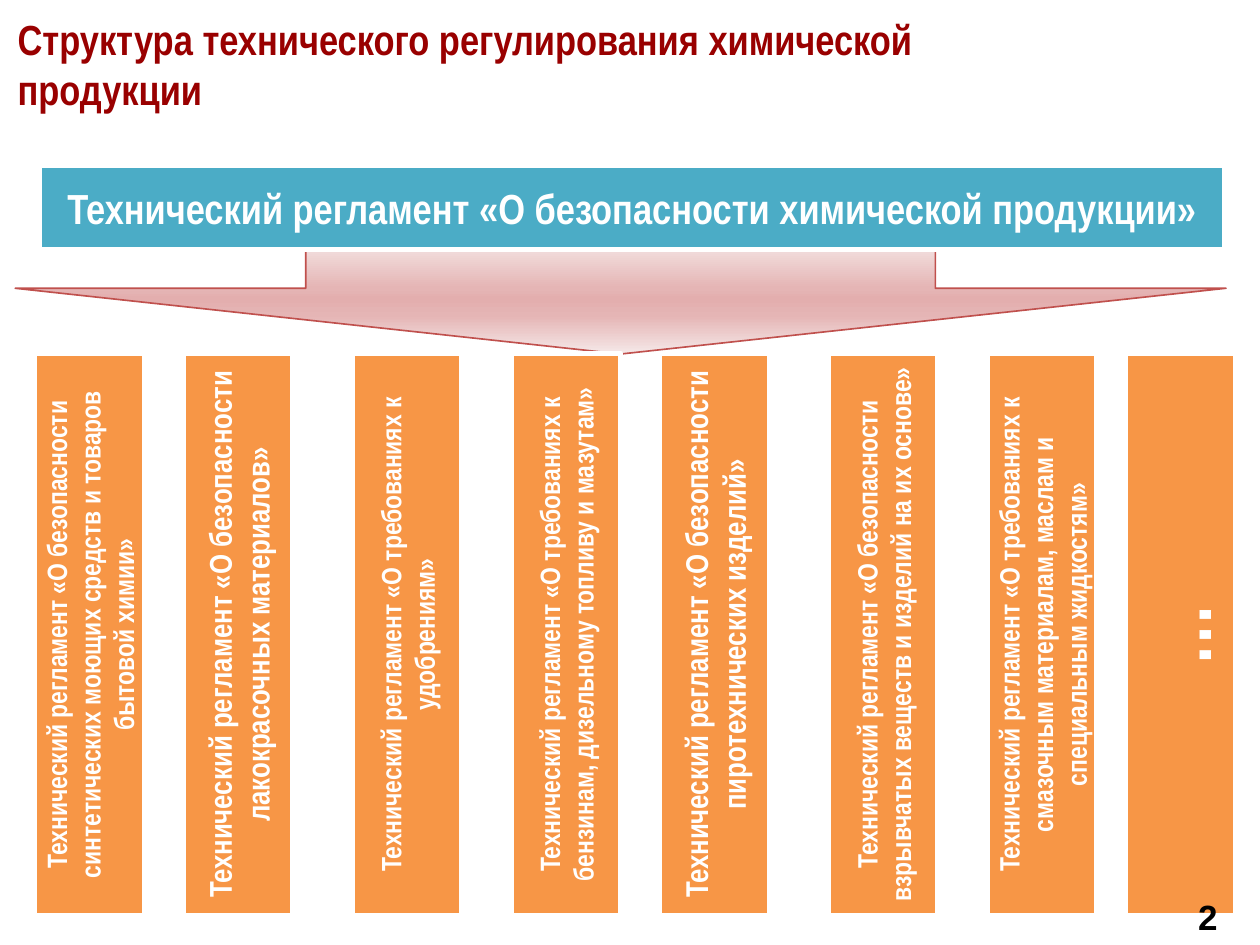
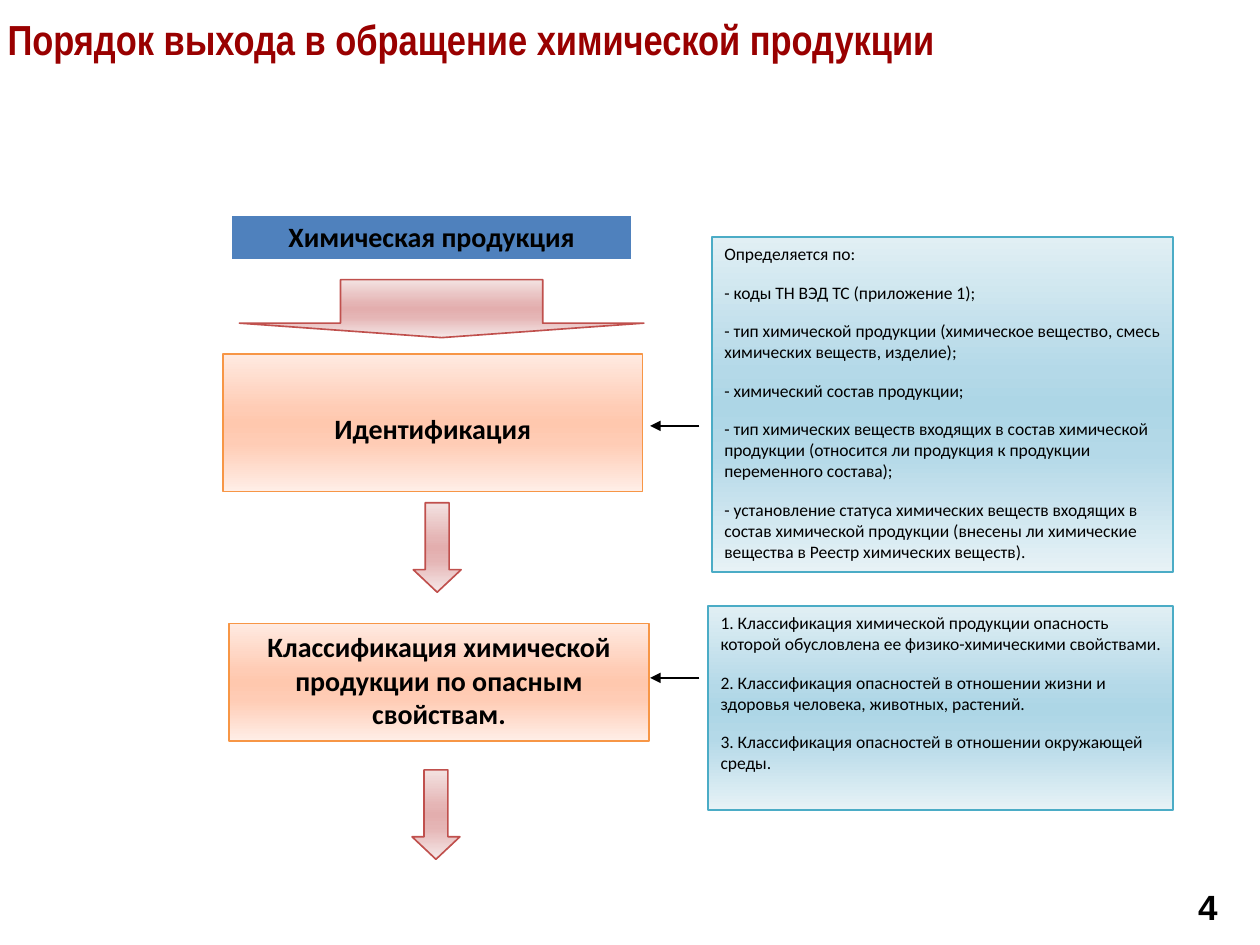
import pptx
import pptx.dml.color
import pptx.enum.shapes
import pptx.enum.text
import pptx.oxml
import pptx.oxml.ns
import pptx.util
from lxml import etree

Inches = pptx.util.Inches
Pt = pptx.util.Pt
MSO = pptx.enum.shapes.MSO_SHAPE
ANCHOR = pptx.enum.text.MSO_ANCHOR
ALIGN = pptx.enum.text.PP_ALIGN
rgb = pptx.dml.color.RGBColor.from_string
qn = pptx.oxml.ns.qn

STOPS = [0, 40, 50, 65, 100]
ROSE = ["F3E2E1", "E5B5B5", "E3AEAE", "E5B5B5", "F5E8E8"]
PEACH = ["FFEAE1", "FFCCB5", "FFC8AE", "FFCCB5", "FFEEE7"]
AQUA = ["E1EFF4", "B4D9E8", "ADD6E6", "B4D9E8", "E7F2F6"]
TITLE = {"name": "Arial Narrow", "size": Pt(24), "bold": True}
NUMBER = {"name": "Arial", "size": Pt(20), "bold": True}
STEP = {"name": "Calibri", "size": Pt(16), "bold": True}
NOTE = {"name": "Calibri", "size": Pt(10), "bold": False}


def add_box(s, kind, box, fill, line, width=0.94):
    sp = s.shapes.add_shape(kind, *map(Inches, box))
    sp.shadow.inherit = False
    sp.line.color.rgb = rgb(line)
    sp.line.width = Pt(width)
    if isinstance(fill, str):
        sp.fill.solid()
        sp.fill.fore_color.rgb = rgb(fill)
    else:
        sp.fill.gradient()
        sp.fill.gradient_angle = 270
        stops = sp._element.spPr.find(qn("a:gradFill")).find(qn("a:gsLst"))
        for old in list(stops):
            stops.remove(old)
        for pos, color in zip(STOPS, fill):
            gs = etree.SubElement(stops, qn("a:gs"), pos=str(pos * 1000))
            etree.SubElement(gs, qn("a:srgbClr"), val=color)
    return sp


def write(sp, lines, font, color, align=ALIGN.LEFT, anchor=ANCHOR.TOP, after=0):
    tf = sp.text_frame
    tf.word_wrap = True
    tf.auto_size = pptx.enum.text.MSO_AUTO_SIZE.NONE
    tf.vertical_anchor = anchor
    for i, line in enumerate(lines):
        p = tf.paragraphs[0] if i == 0 else tf.add_paragraph()
        p.alignment = align
        p.space_before = Pt(0)
        p.space_after = Pt(after)
        r = p.add_run()
        r.text = line
        for key, value in font.items():
            setattr(r.font, key, value)
        r.font.color.rgb = rgb(color)


prs = pptx.Presentation()
prs.slide_width, prs.slide_height = Inches(10), Inches(7.5)

slides = []
for title, left, top, number, number_top in [
    ("Структура технического регулирования химической продукции", 0.04, 0.17, "2", 7.06),
    ("Порядок выхода в обращение химической продукции", -0.04, -0.03, "4", 6.98),
]:
    s = prs.slides.add_slide(prs.slide_layouts[5])
    sp = s.shapes.title
    sp.left, sp.top, sp.width, sp.height = map(Inches, (left, top, 7.67, 0.67))
    write(sp, [title], TITLE, "990000", anchor=ANCHOR.MIDDLE)
    slides.append((s, number, number_top))

s = slides[0][0]
sp = add_box(s, MSO.DOWN_ARROW, (0.12, 1.94, 9.61, 0.87), ROSE, "C0504D")
sp.adjustments[0], sp.adjustments[1] = 0.52, 0.6
sp = add_box(s, MSO.RECTANGLE, (0.31, 1.31, 9.41, 0.67), "4BACC6", "FFFFFF", 3)
write(sp, ["Технический регламент «О безопасности химической продукции»"],
      TITLE, "FFFFFF", ALIGN.CENTER, ANCHOR.MIDDLE)

for left, size, text in [
    (-1.52, 16, "Технический регламент «О безопасности синтетических моющих средств и товаров бытовой химии»"),
    (-0.34, 18, "Технический регламент «О безопасности лакокрасочных материалов»"),
    (1, 16, "Технический регламент «О требованиях к удобрениям»"),
    (2.26, 16, "Технический регламент «О требованиях к бензинам, дизельному топливу и мазутам»"),
    (3.44, 18, "Технический регламент «О безопасности пиротехнических изделий»"),
    (4.78, 16, "Технический регламент «О безопасности взрывчатых веществ и изделий на их основе»"),
    (6.04, 16, "Технический регламент «О требованиях к смазочным материалам, маслам и специальным жидкостям»"),
    (7.14, 44, "…"),
]:
    sp = add_box(s, MSO.RECTANGLE, (left, 4.6, 4.46, 0.87), "F79646", "FFFFFF", 3)
    sp.rotation = 270
    write(sp, [text], {**TITLE, "size": Pt(size)}, "FFFFFF", ALIGN.CENTER, ANCHOR.MIDDLE)

s = slides[1][0]
for box, fill, line, width, inset, text in [
    ((1.82, 1.69, 3.21, 0.39), "4F81BD", "FFFFFF", 3, 0.05, "Химическая продукция"),
    ((1.77, 2.81, 3.33, 1.09), PEACH, "F79646", 0.94, 0.46, "Идентификация"),
    ((1.82, 4.95, 3.33, 0.93), PEACH, "F79646", 0.94, 0.05,
     "Классификация химической продукции по опасным свойствам."),
]:
    sp = add_box(s, MSO.FLOWCHART_PROCESS, box, fill, line, width)
    sp.text_frame.margin_top = Inches(inset)
    write(sp, [text], STEP, "000000", ALIGN.CENTER, after=10)

for box, head in [
    ((1.9, 2.22, 3.21, 0.46), 0.25),
    ((3.28, 3.99, 0.38, 0.71), 0.47),
    ((3.27, 6.11, 0.38, 0.71), 0.47),
]:
    sp = add_box(s, MSO.DOWN_ARROW, box, ROSE, "C0504D")
    sp.adjustments[0], sp.adjustments[1] = 0.5, head

for box, lines in [
    ((5.65, 1.88, 3.66, 2.66), [
        "Определяется по:",
        "- коды ТН ВЭД ТС (приложение 1);",
        "- тип химической продукции (химическое вещество, смесь химических веществ, изделие);",
        "- химический состав продукции;",
        "- тип химических веществ входящих в состав химической продукции "
        "(относится ли продукция к продукции переменного состава);",
        "- установление статуса химических веществ входящих в состав химической продукции "
        "(внесены ли химические вещества в Реестр химических веществ).",
    ]),
    ((5.62, 4.81, 3.69, 1.62), [
        "1. Классификация химической продукции опасность которой обусловлена "
        "ее физико-химическими свойствами.",
        "2. Классификация опасностей в отношении жизни и здоровья человека, животных, растений.",
        "3. Классификация опасностей в отношении окружающей среды.",
    ]),
]:
    sp = add_box(s, MSO.RECTANGLE, box, AQUA, "4BACC6")
    write(sp, lines, NOTE, "000000", after=10)

for y in (3.38, 5.38):
    sp = s.shapes.add_connector(pptx.enum.shapes.MSO_CONNECTOR.STRAIGHT,
                                *map(Inches, (5.55, y, 5.16, y)))
    sp.line.color.rgb = rgb("000000")
    sp.line.width = Pt(0.75)
    etree.SubElement(sp.line._get_or_add_ln(), qn("a:tailEnd"), type="triangle")
    etree.SubElement(sp._element.spPr, qn("a:effectLst"))

for s, number, top in slides:
    sp = s.shapes.add_textbox(*map(Inches, (9.41, top, 0.39, 0.44)))
    write(sp, [number], NUMBER, "000000")

prs.save("out.pptx")
